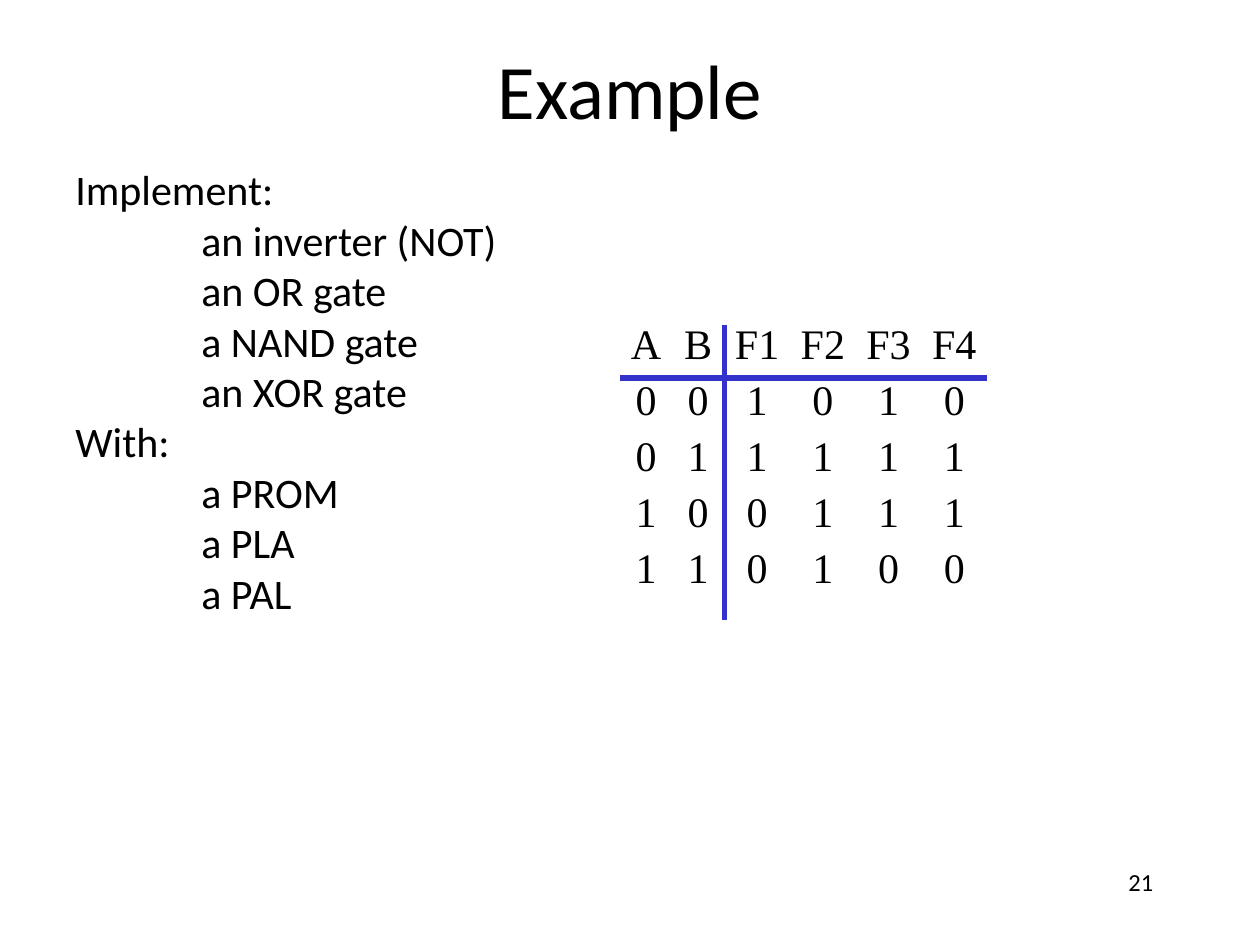
from pptx import Presentation
from pptx.dml.color import RGBColor
from pptx.enum.shapes import MSO_CONNECTOR
from pptx.enum.text import MSO_ANCHOR, PP_ALIGN
from pptx.oxml.ns import qn
from pptx.util import Cm, Pt
from lxml.etree import SubElement

BLACK, BLUE = "000000", "3333CC"
TASKS = [
    ("Implement:", ["an inverter (NOT)", "an OR gate", "a NAND gate", "an XOR gate"]),
    ("With:", ["a PROM", "a PLA", "a PAL"]),
]
TRUTH = ["A B F1 F2 F3 F4", "0 0 1 0 1 0", "0 1 1 1 1 1", "1 0 0 1 1 1", "1 1 0 1 0 0"]


def color(code):
    return RGBColor.from_string(code)


def style(para, text, size, font="Calibri", align=PP_ALIGN.LEFT):
    para.text = text
    para.alignment = align
    para.font.size = Pt(size)
    para.font.name = font
    para.font.color.rgb = color(BLACK)


def add_box(slide, box, anchor=MSO_ANCHOR.TOP):
    frame = slide.shapes.add_textbox(*map(Cm, box)).text_frame
    frame.word_wrap = True
    frame.vertical_anchor = anchor
    return frame


def add_label(slide, box, text, size, align, anchor=MSO_ANCHOR.TOP):
    frame = add_box(slide, box, anchor)
    style(frame.paragraphs[0], text, size, align=align)


def add_tasks(slide, box):
    frame = add_box(slide, box)
    lines = [(text, depth) for head, items in TASKS
             for text, depth in [(head, 0)] + [(item, 1) for item in items]]
    for i, (text, depth) in enumerate(lines):
        para = frame.add_paragraph() if i else frame.paragraphs[0]
        style(para, text, 24)
        # Items are indented under their heading
        para._p.get_or_add_pPr().set("marL", str(Cm(2.54 * depth)))


def add_rule(slide, *ends):
    rule = slide.shapes.add_connector(MSO_CONNECTOR.STRAIGHT, *map(Cm, ends))
    rule.line.color.rgb = color(BLUE)
    rule.line.width = Pt(3)
    SubElement(rule._element.spPr, qn("a:effectLst"))


def add_truth(slide, box):
    left, top, width, height = box
    in_width, row_height = 1.05, 1.13
    split = left + 2 * in_width
    out_width = (width - 2 * in_width) / 4
    rows = [line.split() for line in TRUTH]

    # Table of inputs and outputs, set slightly above the rules' top
    table = slide.shapes.add_table(
        len(rows), len(rows[0]), Cm(left), Cm(top - 0.15),
        Cm(width), Cm(row_height * len(rows))).table
    table.first_row = table.horz_banding = False
    for i, column in enumerate(table.columns):
        column.width = Cm(in_width if i < 2 else out_width)
    for row, values in zip(table.rows, rows):
        row.height = Cm(row_height)
        for cell, value in zip(row.cells, values):
            cell.fill.background()
            cell.margin_left = cell.margin_right = 0
            cell.margin_top = cell.margin_bottom = 0
            cell.vertical_anchor = MSO_ANCHOR.MIDDLE
            style(cell.text_frame.paragraphs[0], value, 24,
                  "Times New Roman", PP_ALIGN.CENTER)

    # Rules between inputs and outputs, and under the header
    add_rule(slide, split, top, split, top + height)
    add_rule(slide, left, top + 1.07, left + width, top + 1.07)


def main():
    deck = Presentation()
    deck.slide_width, deck.slide_height = Cm(25.4), Cm(19.05)
    slide = deck.slides.add_slide(deck.slide_layouts[6])
    add_label(slide, (1.9, 0.2, 21.6, 3.18), "Example", 44,
              PP_ALIGN.CENTER, MSO_ANCHOR.MIDDLE)
    add_truth(slide, (12.5, 6.55, 7.4, 5.95))
    add_tasks(slide, (1.27, 3.18, 23.6, 9.5))
    add_label(slide, (18.2, 17.35, 5.3, 1.27), "21", 14, PP_ALIGN.RIGHT)
    deck.save("out.pptx")


if __name__ == "__main__":
    main()
